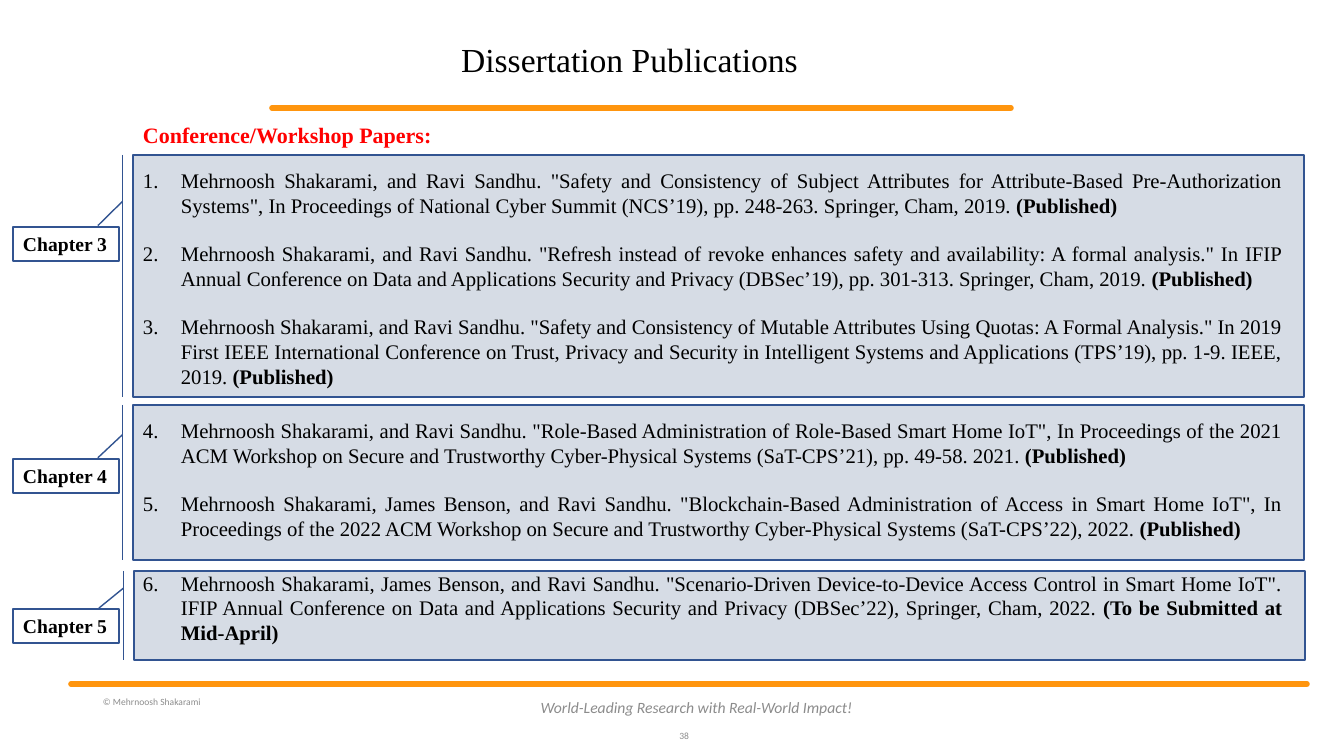
"""Builds the dissertation publications slide, grouped by chapter."""
from lxml import etree
from pptx import Presentation, util as u
from pptx.dml.color import RGBColor
from pptx.enum import shapes, text
from pptx.oxml import ns

THEME = dict(
    serif="Times New Roman", sans="Calibri",
    black="000000", red="FF0000", grey="8C8C8C",
    orange="FF950E", navy="325491", panel="D6DCE5",
    title=24, heading=15.7, body=14.8, chapter=14, motto=11.2, small=6.8,
)


def px(*lengths):
    return [round(n * 914400 / 100.8) for n in lengths]


def add_run(paragraph, words, size, color="black", face="serif", bold=False, italic=False):
    run = paragraph.add_run()
    run.text = words
    run.font.name = THEME[face]
    run.font.size = u.Pt(THEME[size])
    run.font.color.rgb = RGBColor.from_string(THEME[color])
    run.font.bold = bold
    run.font.italic = italic


deck = Presentation()
deck.slide_width, deck.slide_height = px(1344, 756)
slide = deck.slides.add_slide(deck.slide_layouts[5])

for left, right, y in [(272, 1011, 108), (71, 1307, 684)]:
    rule = slide.shapes.add_connector(shapes.MSO_CONNECTOR.STRAIGHT, *px(left, y, right, y))
    rule.line.color.rgb = RGBColor.from_string(THEME["orange"])
    rule.line.width = u.Pt(4)
    rule.line._get_or_add_ln().set("cap", "rnd")
    etree.SubElement(rule._element.spPr, ns.qn("a:effectLst"))

chapters = [
    ("Chapter 3", 133, 155, 242, 227, 0.292),
    ("Chapter 4", 133, 405, 155, 459, 0.341),
    ("Chapter 5", 134, 571, 89, 609, 0.417),
]
for chapter, left, top, height, label_top, pointer in chapters:
    panel = slide.shapes.add_shape(
        shapes.MSO_SHAPE.LINE_CALLOUT_1_BORDER_AND_ACCENT_BAR, *px(left, top, 1171, height))
    for i, value in enumerate([0.192, -0.009, pointer, -0.03]):
        panel.adjustments[i] = value
    panel.fill.solid()
    panel.fill.fore_color.rgb = RGBColor.from_string(THEME["panel"])

    label = slide.shapes.add_shape(shapes.MSO_SHAPE.RECTANGLE, *px(13, label_top, 106, 34))
    label.fill.background()
    label.text_frame.word_wrap = False
    label.text_frame.paragraphs[0].alignment = text.PP_ALIGN.LEFT
    add_run(label.text_frame.paragraphs[0], chapter, "chapter", bold=True)

    for outlined, weight in [(panel, 1), (label, 1.25)]:
        outlined.shadow.inherit = False
        outlined.line.color.rgb = RGBColor.from_string(THEME["navy"])
        outlined.line.width = u.Pt(weight)

title = slide.shapes.title
title.left, title.top, title.width, title.height = px(267, 34, 725, 51)
title.text_frame.vertical_anchor = text.MSO_ANCHOR.BOTTOM
heading = title.text_frame.paragraphs[0]
heading.alignment = text.PP_ALIGN.CENTER
heading.line_spacing = 0.9
add_run(heading, "Dissertation Publications", "title")

papers = [
    (14.7, "Mehrnoosh Shakarami, and Ravi Sandhu. \"Safety and Consistency of Subject Attributes for "
     "Attribute-Based Pre-Authorization Systems\", In Proceedings of National Cyber Summit (NCS’19), "
     "pp. 248-263. Springer, Cham, 2019. ", "(Published)"),
    (16.6, "Mehrnoosh Shakarami, and Ravi Sandhu. \"Refresh instead of revoke enhances safety and "
     "availability: A formal analysis.\" In IFIP Annual Conference on Data and Applications Security "
     "and Privacy (DBSec’19), pp. 301-313. Springer, Cham, 2019. ", "(Published)"),
    (16.6, "Mehrnoosh Shakarami, and Ravi Sandhu. \"Safety and Consistency of Mutable Attributes Using "
     "Quotas: A Formal Analysis.\" In 2019 First IEEE International Conference on Trust, Privacy and "
     "Security in Intelligent Systems and Applications (TPS’19), pp. 1-9. IEEE, 2019. ", "(Published)"),
    (21.4, "Mehrnoosh Shakarami, and Ravi Sandhu. \"Role-Based Administration of Role-Based Smart Home "
     "IoT\", In Proceedings of the 2021 ACM Workshop on Secure and Trustworthy Cyber-Physical Systems "
     "(SaT-CPS’21), pp. 49-58. 2021. ", "(Published)"),
    (16.6, "Mehrnoosh Shakarami, James Benson, and Ravi Sandhu. \"Blockchain-Based Administration of "
     "Access in Smart Home IoT\", In Proceedings of the 2022 ACM Workshop on Secure and Trustworthy "
     "Cyber-Physical Systems (SaT-CPS’22), 2022. ", "(Published)"),
    (21.4, "Mehrnoosh Shakarami, James Benson, and Ravi Sandhu. \"Scenario-Driven Device-to-Device "
     "Access Control in Smart Home IoT\". IFIP Annual Conference on Data and Applications Security "
     "and Privacy (DBSec’22), Springer, Cham, 2022. ", "(To be Submitted at Mid-April)"),
]
publications = slide.shapes.add_textbox(*px(133, 123, 1159, 571)).text_frame
publications.word_wrap = True
publications.margin_top = 0
add_run(publications.paragraphs[0], "Conference/Workshop Papers:", "heading", "red", bold=True)
for gap, citation, status in papers:
    paper = publications.add_paragraph()
    properties = paper._p.get_or_add_pPr()
    indent, = px(38)
    properties.set("marL", str(indent))
    properties.set("indent", str(-indent))
    etree.SubElement(properties, ns.qn("a:buAutoNum"), type="arabicPeriod")
    paper.space_before = u.Pt(gap)
    add_run(paper, citation, "body")
    add_run(paper, status, "body", bold=True)
for paragraph in publications.paragraphs:
    paragraph.alignment = text.PP_ALIGN.JUSTIFY
    paragraph.line_spacing = u.Pt(17.7)

footers = [
    ("38", (645, 716, 54, 40), text.PP_ALIGN.RIGHT, "small", False),
    ("World-Leading Research with Real-World Impact!", (403, 687, 587, 40),
     text.PP_ALIGN.CENTER, "motto", True),
    ("© Mehrnoosh Shakarami", (93, 684, 310, 36), text.PP_ALIGN.LEFT, "small", False),
]
for words, place, alignment, size, italic in footers:
    footer = slide.shapes.add_textbox(*px(*place)).text_frame
    footer.word_wrap = True
    footer.vertical_anchor = text.MSO_ANCHOR.MIDDLE
    footer.paragraphs[0].alignment = alignment
    add_run(footer.paragraphs[0], words, size, "grey", "sans", italic=italic)

deck.save("out.pptx")
